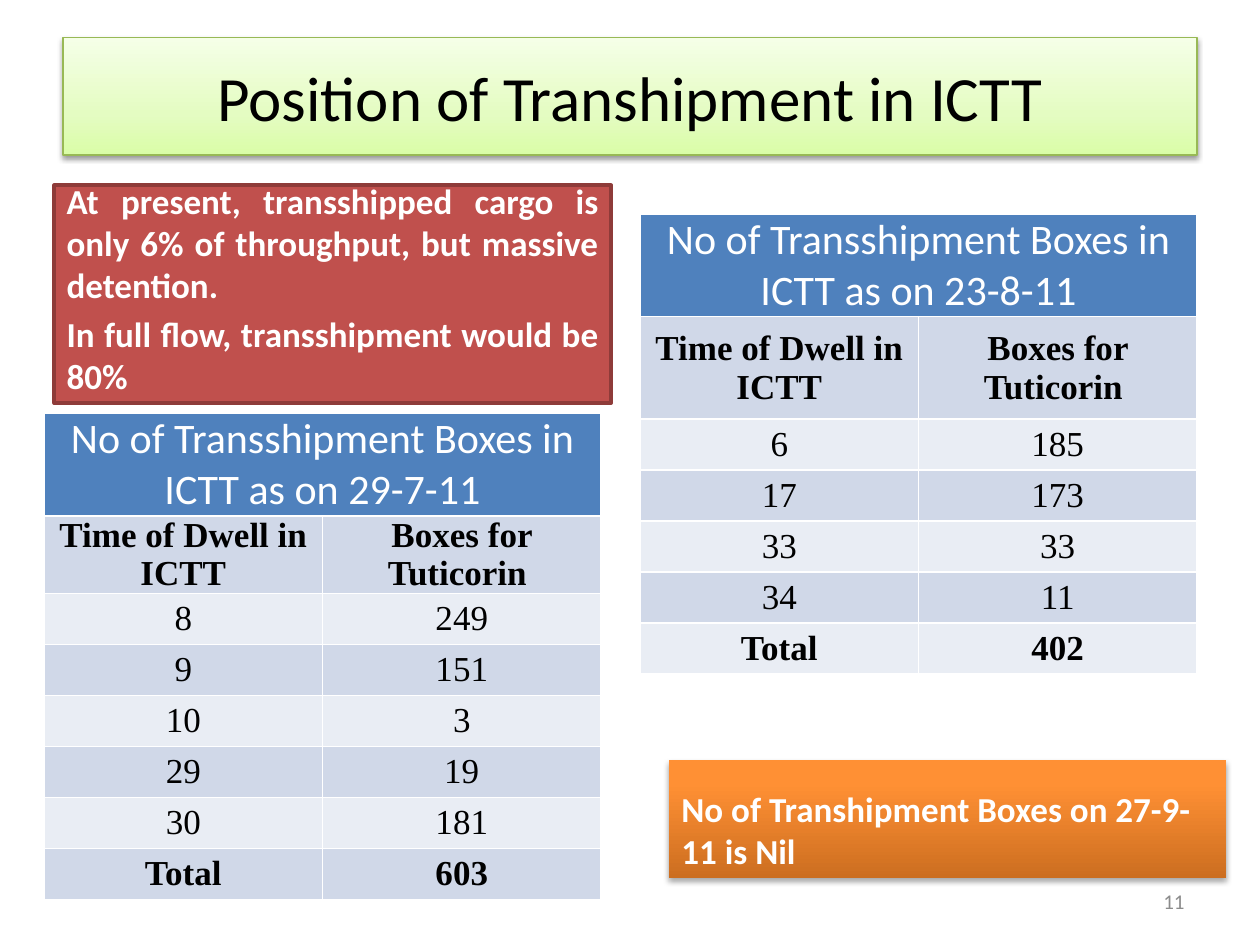
from lxml import etree
from pptx import Presentation, util as u
from pptx.dml.color import RGBColor
from pptx.enum import shapes, text as t
from pptx.oxml import ns, parse_xml

COLS, ROWS = 100, 75
STEP = u.Inches(0.1)
LINE = 4.05  # height of a one-line table row, in grid rows
HUE = {
    "white": "FFFFFF", "black": "000000", "gray": "8C8C8C",
    "red": "C0504D", "dark": "8E3B39", "green": "98B955",
    "blue": "4F81BD", "band": "D0D8E8", "pale": "E9EDF4",
}
LIME = [(0, "DAFDA7"), (35, "E4FCC2"), (100, "F5FFE7")]
AMBER = [(0, "CC6E20"), (80, "FF9034"), (100, "FF9136")]
ALIGN, ANCHOR = t.PP_ALIGN, t.MSO_ANCHOR


def grid(*sizes):
    return [round(size * STEP) for size in sizes]


def rgb(name):
    return RGBColor.from_string(HUE[name])


def write(frame, *lines, size=20, font="Calibri", hue="white", bold=False,
          align=ALIGN.CENTER, gap=0):
    frame.word_wrap = True
    for i, line in enumerate(lines):
        para = frame.add_paragraph() if i else frame.paragraphs[0]
        para.alignment = align
        para.space_before = u.Pt(gap)
        run = para.add_run()
        run.text = line
        run.font.size, run.font.name, run.font.bold = u.Pt(size), font, bold
        run.font.color.rgb = rgb(hue)


def fade(shape, stops):
    """Fill the shape with colour stops running from bottom to top."""
    shape.fill.gradient()
    shape.fill.gradient_angle = 90
    holder = shape._element.spPr.find(".//" + ns.qn("a:gsLst"))
    for old in list(holder):
        holder.remove(old)
    for share, value in stops:
        stop = etree.SubElement(holder, ns.qn("a:gs"), pos=str(share * 1000))
        etree.SubElement(stop, ns.qn("a:srgbClr"), val=value)


def shade(shape, alpha, drop):
    """Cast a soft shadow straight down."""
    shape._element.spPr.append(parse_xml(
        f'<a:effectLst {ns.nsdecls("a")}><a:outerShdw blurRad="{u.Pt(3.1)}" '
        f'dist="{u.Pt(drop)}" dir="5400000" rotWithShape="0">'
        f'<a:srgbClr val="{HUE["black"]}"><a:alpha val="{alpha * 1000}"/>'
        '</a:srgbClr></a:outerShdw></a:effectLst>'))


def panel(slide, box, *lines, fill=None, stops=None, edge=None, width=1,
          shadow=None, anchor=ANCHOR.BOTTOM, **style):
    shape = slide.shapes.add_shape(shapes.MSO_SHAPE.RECTANGLE, *grid(*box))
    if stops:
        fade(shape, stops)
    else:
        shape.fill.solid()
        shape.fill.fore_color.rgb = rgb(fill)
    if edge:
        shape.line.color.rgb = rgb(edge)
        shape.line.width = u.Pt(width)
    else:
        shape.line.fill.background()
    if shadow:
        shade(shape, *shadow)
    else:
        shape.shadow.inherit = False
    shape.text_frame.vertical_anchor = anchor
    write(shape.text_frame, *lines, **style)


def frame(cell):
    """Draw thin white borders round a cell."""
    props = cell._tc.get_or_add_tcPr()
    for side in "LRTB":
        props.append(parse_xml(
            f'<a:ln{side} {ns.nsdecls("a")} w="{u.Pt(1)}"><a:solidFill>'
            f'<a:srgbClr val="{HUE["white"]}"/></a:solidFill></a:ln{side}>'))


def dwell(slide, box, date, counts, head):
    """Place a table of boxes by dwell time; head is the heading row's height in lines."""
    rows = [(f"No of Transshipment Boxes in ICTT as on {date}", ""),
            ("Time of Dwell in ICTT", "Boxes for Tuticorin "),
            *counts, ("Total", sum(n for _, n in counts))]
    left, top, width = box
    highs = [2 * LINE, head * LINE] + [LINE] * (len(rows) - 2)
    table = slide.shapes.add_table(
        len(rows), 2, *grid(left, top, width, sum(highs))).table
    for col in table.columns:
        col.width = grid(width / 2)[0]
    for r, (row, high) in enumerate(zip(rows, highs)):
        table.rows[r].height = grid(high)[0]
        for c, value in enumerate(row):
            cell = table.cell(r, c)
            frame(cell)
            cell.fill.solid()
            cell.fill.fore_color.rgb = rgb(
                "blue" if r == 0 else "band" if r % 2 else "pale")
            cell.vertical_anchor = ANCHOR.MIDDLE
            cell.margin_left = cell.margin_right = u.Inches(0.07)
            cell.margin_top = cell.margin_bottom = 0
            if r:
                write(cell.text_frame, str(value), font="Times New Roman",
                      hue="black", bold=r in (1, len(rows) - 1))
    title = table.cell(0, 0)
    title.merge(table.cell(0, 1))
    write(title.text_frame, rows[0][0], size=24)


def folio(slide, box, number):
    label = slide.shapes.add_textbox(*grid(*box))
    label.text_frame.vertical_anchor = ANCHOR.MIDDLE
    write(label.text_frame, number, size=12, hue="gray", align=ALIGN.RIGHT)


def main():
    deck = Presentation()
    deck.slide_width, deck.slide_height = grid(COLS, ROWS)
    slide = deck.slides.add_slide(deck.slide_layouts[6])
    wide = 44.2
    panel(slide, (5, 3, 90, 9.3), "Position of Transhipment in ICTT",
          stops=LIME, edge="green", width=0.75, shadow=(38, 1.6),
          anchor=ANCHOR.MIDDLE, size=36, hue="black")
    panel(slide, (4.3, 14.7, wide, 17.3),
          "At present, transshipped cargo is only 6% of throughput, "
          "but massive detention.",
          "In full flow, transshipment would be 80%",
          fill="red", edge="dark", width=2, bold=True,
          align=ALIGN.JUSTIFY, gap=4)
    dwell(slide, (3.5, 32.8, wide), "29-7-11",
          [(8, 249), (9, 151), (10, 3), (29, 19), (30, 181)], 1.5)
    panel(slide, (53.1, 60.3, wide, 9.4),
          "No of Transhipment Boxes on 27-9-11 is Nil",
          stops=AMBER, shadow=(35, 1.8), bold=True, align=ALIGN.LEFT, gap=4)
    dwell(slide, (50.8, 17, wide), "23-8-11",
          [(6, 185), (17, 173), (33, 33), (34, 11)], 2)
    folio(slide, (71.7, 69.5, 23.3, 4), "11")
    deck.save("out.pptx")


if __name__ == "__main__":
    main()
